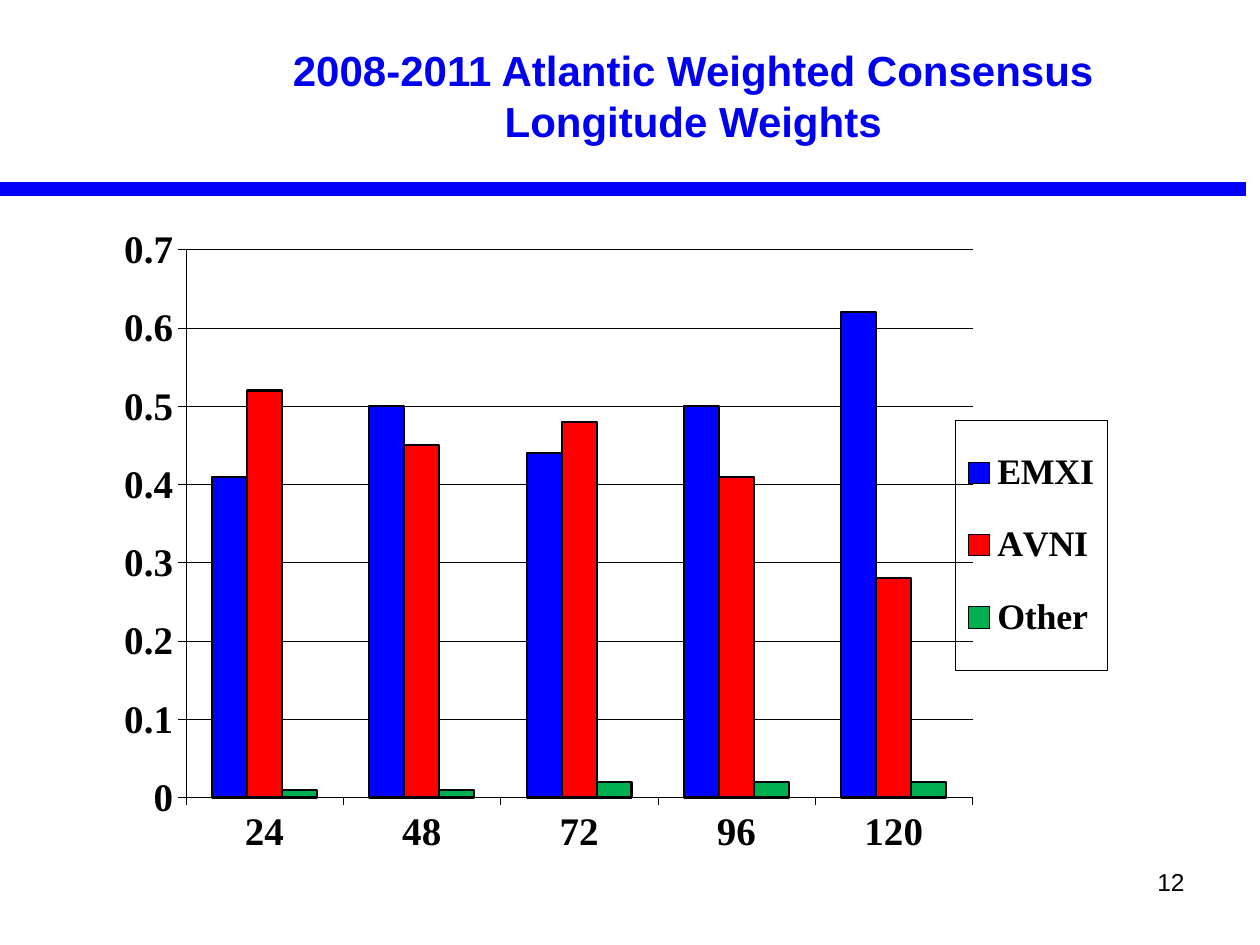
from dataclasses import dataclass

import lxml.etree
import pptx
import pptx.chart.data
import pptx.dml.color
import pptx.enum.chart
import pptx.enum.shapes
import pptx.enum.text
import pptx.oxml
import pptx.oxml.ns
import pptx.util


@dataclass(frozen=True)
class Theme:
    text_font: str = "Arial"
    chart_font: str = "Times New Roman"
    title_color: str = "0000F1"
    rule_color: str = "0101FA"
    ink: str = "000000"
    background: str = "FFFFFF"
    title_size: float = 24
    number_size: float = 14
    axis_size: float = 22.3
    legend_size: float = 20.5
    rule_width: float = 8
    bar_outline: float = 1.25
    hairline: float = 0.31


def qualified(tag):
    return pptx.oxml.ns.qn(tag)


def rgb(color):
    return pptx.dml.color.RGBColor.from_string(color)


def style_font(font, name, size, color, bold=False):
    font.name, font.size, font.bold = name, pptx.util.Pt(size), bold
    font.color.rgb = rgb(color)


def style_line(line, color, width):
    line.color.rgb = rgb(color)
    line.width = pptx.util.Pt(width)


def manual_layout(x, y, w, h, inner=False):
    """Return a c:layout element placed by fractions of the chart area."""
    layout = lxml.etree.Element(qualified("c:layout"))
    manual = lxml.etree.SubElement(layout, qualified("c:manualLayout"))
    settings = [("layoutTarget", "inner")] if inner else []
    settings += [("xMode", "edge"), ("yMode", "edge"),
                 ("x", x), ("y", y), ("w", w), ("h", h)]
    for tag, value in settings:
        lxml.etree.SubElement(manual, qualified(f"c:{tag}")).set("val", str(value))
    return layout


def drop_layout(parent):
    for layout in parent.findall(qualified("c:layout")):
        parent.remove(layout)


class SlideBuilder:
    def __init__(self, slide, theme):
        self.slide = slide
        self.theme = theme
        slide.background.fill.solid()
        slide.background.fill.fore_color.rgb = rgb(theme.background)

    def set_text(self, frame, text, size, color, align, bold=False):
        frame.word_wrap = True
        frame.text = text
        for paragraph in frame.paragraphs:
            paragraph.alignment = align
            for run in paragraph.runs:
                style_font(run.font, self.theme.text_font, size, color, bold)

    def title(self, text, left, top, width, height):
        title = self.slide.shapes.title
        title.left, title.top, title.width, title.height = left, top, width, height
        title.text_frame.vertical_anchor = pptx.enum.text.MSO_ANCHOR.MIDDLE
        self.set_text(title.text_frame, text, self.theme.title_size,
                      self.theme.title_color, pptx.enum.text.PP_ALIGN.CENTER, bold=True)

    def page_number(self, number, left, top, width, height):
        box = self.slide.shapes.add_textbox(left, top, width, height)
        self.set_text(box.text_frame, number, self.theme.number_size,
                      self.theme.ink, pptx.enum.text.PP_ALIGN.RIGHT)

    def rule(self, left, top, width):
        rule = self.slide.shapes.add_connector(
            pptx.enum.shapes.MSO_CONNECTOR.STRAIGHT, left, top, left + width, top)
        style_line(rule.line, self.theme.rule_color, self.theme.rule_width)
        lxml.etree.SubElement(rule._element.spPr, qualified("a:effectLst"))

    def column_chart(self, categories, series, left, top, width, height):
        """Draw clustered columns; series maps a name to (color, values)."""
        theme = self.theme
        data = pptx.chart.data.CategoryChartData()
        data.categories = categories
        for name, (_, values) in series.items():
            data.add_series(name, values)
        chart = self.slide.shapes.add_chart(
            pptx.enum.chart.XL_CHART_TYPE.COLUMN_CLUSTERED,
            left, top, width, height, data).chart
        chart.has_title = False
        style_font(chart.font, theme.chart_font, theme.axis_size, theme.ink, True)

        plot = chart.plots[0]
        plot.vary_by_categories = False
        plot.gap_width, plot.overlap = 150, 0
        for column, (color, _) in zip(plot.series, series.values()):
            column.format.fill.solid()
            column.format.fill.fore_color.rgb = rgb(color)
            style_line(column.format.line, theme.ink, theme.bar_outline)

        self.axes(chart)
        plot_area = chart._chartSpace.chart.plotArea
        drop_layout(plot_area)
        plot_area.insert(0, manual_layout(0.093, 0.052, 0.721, 0.804, inner=True))
        self.legend(chart)

    def axes(self, chart):
        theme = self.theme
        for axis in (chart.category_axis, chart.value_axis):
            axis.major_tick_mark = pptx.enum.chart.XL_TICK_MARK.OUTSIDE
            axis.minor_tick_mark = pptx.enum.chart.XL_TICK_MARK.NONE
            style_line(axis.format.line, theme.ink, theme.hairline)
            style_font(axis.tick_labels.font, theme.chart_font,
                       theme.axis_size, theme.ink, True)
        chart.category_axis.tick_label_position = pptx.enum.chart.XL_TICK_LABEL_POSITION.LOW
        weights = chart.value_axis
        weights.minimum_scale, weights.maximum_scale = 0, 0.7
        weights.major_unit = 0.1
        weights.has_major_gridlines = True
        style_line(weights.major_gridlines.format.line, theme.ink, theme.hairline)

    def legend(self, chart):
        theme = self.theme
        chart.has_legend = True
        legend = chart.legend
        legend.position = pptx.enum.chart.XL_LEGEND_POSITION.RIGHT
        legend.include_in_layout = False
        style_font(legend.font, theme.chart_font, theme.legend_size, theme.ink, True)
        element = legend._element
        drop_layout(element)
        element.find(qualified("c:legendPos")).addnext(
            manual_layout(0.798, 0.302, 0.139, 0.367))
        border = pptx.oxml.parse_xml(
            f'<c:spPr {pptx.oxml.ns.nsdecls("c", "a")}><a:noFill/>'
            f'<a:ln w="{int(pptx.util.Pt(theme.hairline))}"><a:solidFill>'
            f'<a:srgbClr val="{theme.ink}"/></a:solidFill></a:ln></c:spPr>')
        element.find(qualified("c:txPr")).addprevious(border)


def main():
    cm = pptx.util.Cm
    deck = pptx.Presentation()
    deck.slide_width, deck.slide_height = cm(25.4), cm(19.05)
    title_only = deck.slide_layouts[5]
    builder = SlideBuilder(deck.slides.add_slide(title_only), Theme())

    builder.column_chart(
        ["24", "48", "72", "96", "120"],
        {
            "EMXI": ("0000FF", [0.41, 0.5, 0.44, 0.5, 0.62]),
            "AVNI": ("FF0000", [0.52, 0.45, 0.48, 0.41, 0.28]),
            "Other": ("00B050", [0.01, 0.01, 0.02, 0.02, 0.02]),
        },
        cm(1.7), cm(4.32), cm(22), cm(13.74))
    builder.title("2008-2011 Atlantic Weighted Consensus\nLongitude Weights",
                  cm(3.18), cm(0.33), cm(21.59), cm(3.18))
    builder.rule(cm(0), cm(3.81), cm(25.12))
    builder.page_number("12", cm(18.21), cm(17.35), cm(5.92), cm(1.32))
    deck.save("out.pptx")


if __name__ == "__main__":
    main()
